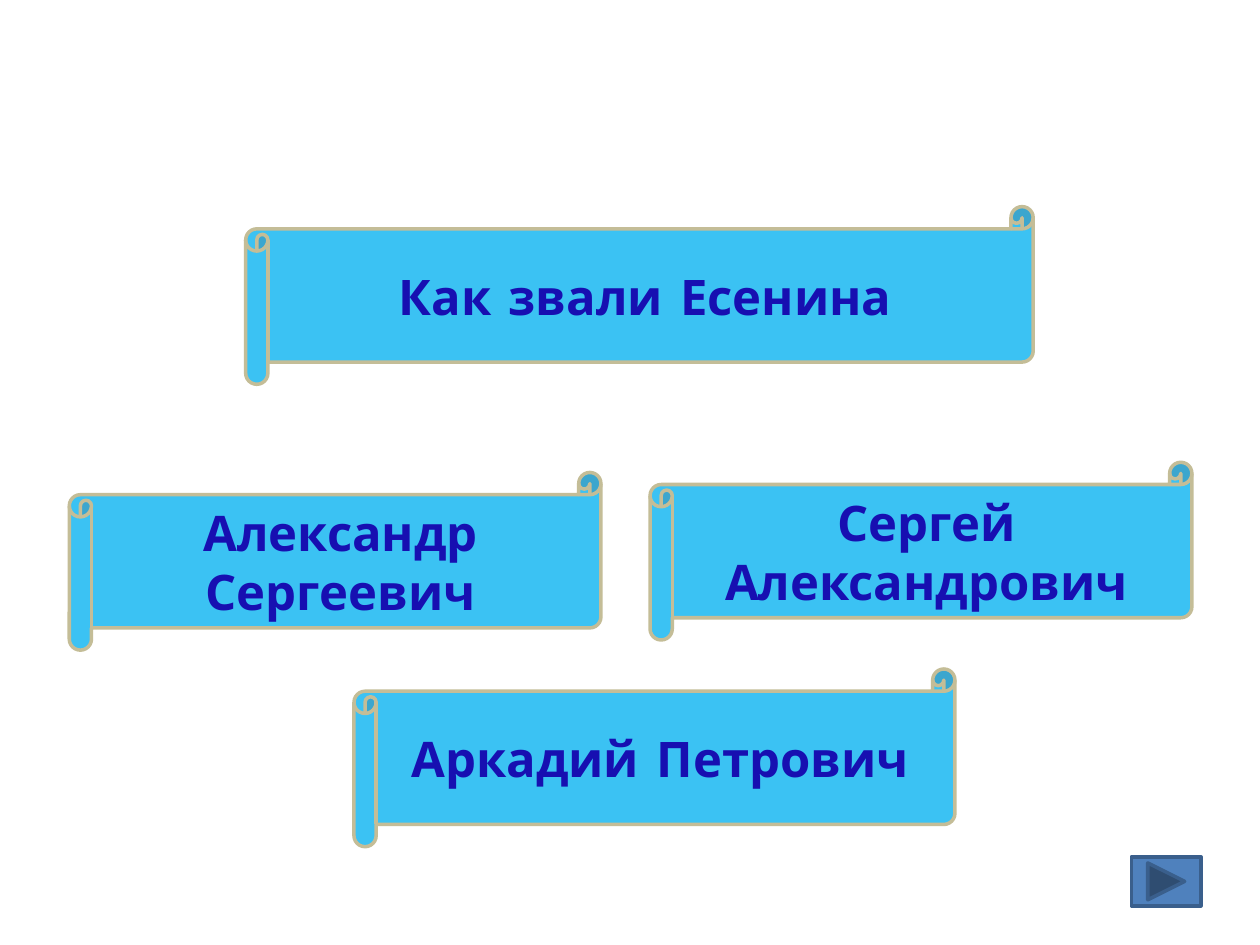
from lxml import etree
from pptx import Presentation
from pptx.dml.color import RGBColor
from pptx.enum import shapes, text
from pptx.oxml.ns import qn
from pptx.util import Pt

SCROLL_HEIGHT = 101.5
SCROLL_OPACITY = 77

QUESTION = ("Как звали Есенина", 140.4, 118.1, 450)
ANSWERS = [
    ("Сергей Александрович", 371.5, 264.2, 309.6),
    ("Аркадий Петрович", 202.3, 382.3, 343.4),
    ("Александр Сергеевич", 39.6, 270, 303.8),
]


def color(hex_value):
    return RGBColor.from_string(hex_value)


def add_outlined(slide, kind, box, fill, line):
    outlined = slide.shapes.add_shape(kind, *[Pt(length) for length in box])
    outlined.shadow.inherit = False
    outlined.fill.solid()
    outlined.fill.fore_color.rgb = color(fill)
    outlined.line.color.rgb = color(line)
    outlined.line.width = Pt(2)
    return outlined


def set_opacity(filled, percent):
    rgb = filled.fill._xPr.find(qn("a:solidFill")).find(qn("a:srgbClr"))
    etree.SubElement(rgb, qn("a:alpha")).set("val", str(percent * 1000))


def add_scroll(slide, wording, left, top, width):
    scroll = add_outlined(slide, shapes.MSO_SHAPE.HORIZONTAL_SCROLL,
                          (left, top, width, SCROLL_HEIGHT), "00B0F0", "C4BD97")
    set_opacity(scroll, SCROLL_OPACITY)

    # Centred wording
    frame = scroll.text_frame
    frame.word_wrap = True
    frame.vertical_anchor = text.MSO_ANCHOR.MIDDLE
    line = frame.paragraphs[0]
    line.alignment = text.PP_ALIGN.CENTER
    run = line.add_run()
    run.text = wording
    font_values = {"name": "Comic Neue", "size": Pt(28), "bold": True}
    for attribute, value in font_values.items():
        setattr(run.font, attribute, value)
    run.font.color.rgb = color("170FB1")


def add_next_button(slide):
    button = add_outlined(slide, shapes.MSO_SHAPE.ACTION_BUTTON_FORWARD_OR_NEXT,
                          (646.6, 489.6, 39.6, 28.1), "4F81BD", "3A5F8C")
    button._element.spPr.find(qn("a:xfrm")).set("flipV", "1")


def main():
    deck = Presentation()
    deck.slide_width, deck.slide_height = Pt(720), Pt(540)
    slide = deck.slides.add_slide(deck.slide_layouts[6])

    # Answers, then the question
    for scroll in [*ANSWERS, QUESTION]:
        add_scroll(slide, *scroll)

    # Navigation
    add_next_button(slide)
    deck.save("out.pptx")


if __name__ == "__main__":
    main()
